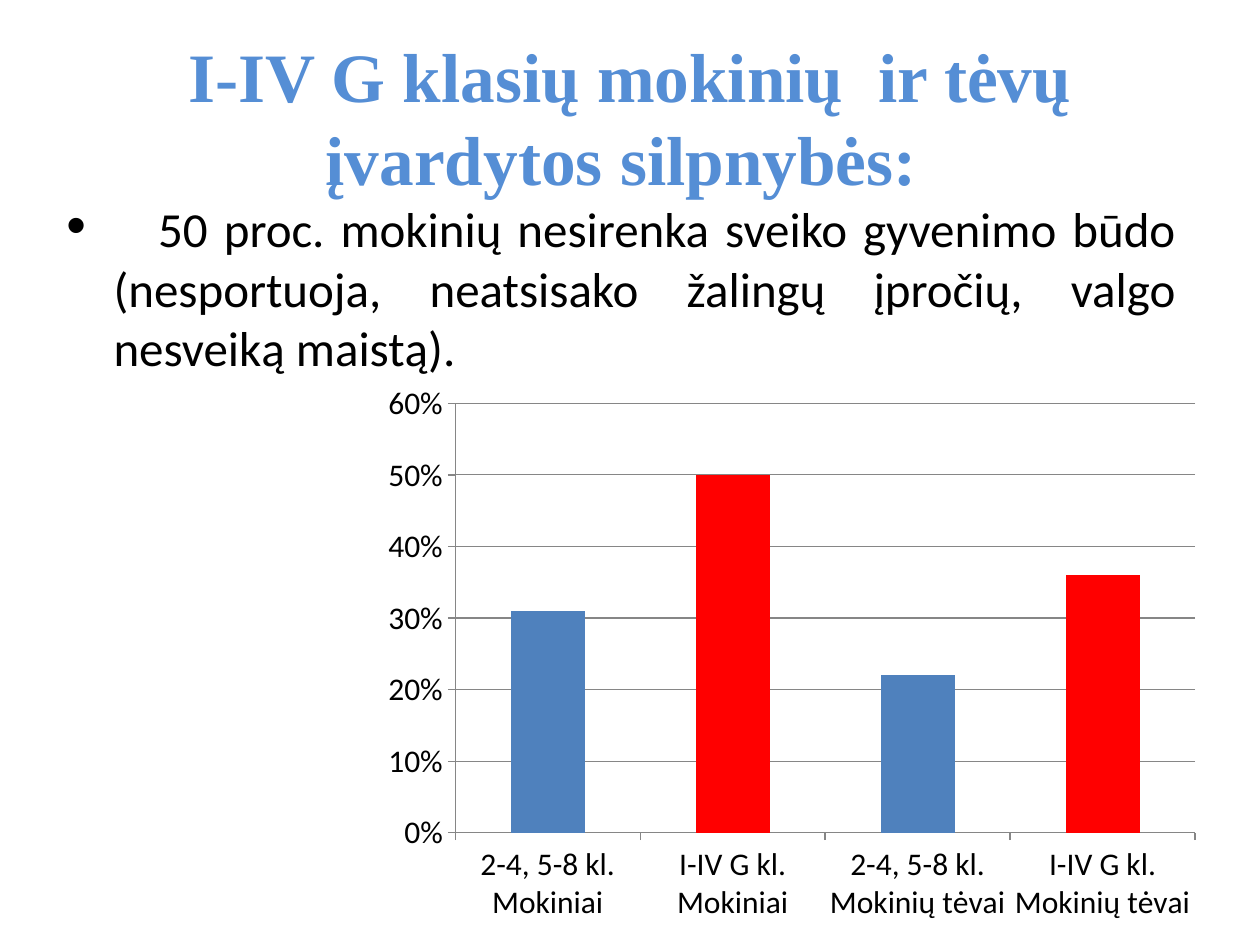
from lxml import etree
from pptx import Presentation
from pptx.chart.data import CategoryChartData
from pptx.dml.color import RGBColor
from pptx.enum.chart import XL_CHART_TYPE, XL_TICK_MARK
from pptx.enum.text import MSO_ANCHOR, PP_ALIGN
from pptx.oxml.ns import qn
from pptx.util import Cm, Pt

COLUMN = XL_CHART_TYPE.COLUMN_CLUSTERED
OUT = XL_TICK_MARK.OUTSIDE
TOP, MIDDLE = MSO_ANCHOR.TOP, MSO_ANCHOR.MIDDLE
CENTER, JUSTIFY = PP_ALIGN.CENTER, PP_ALIGN.JUSTIFY

SKY = RGBColor(0x55, 0x8E, 0xD5)
BLUE = RGBColor(0x4F, 0x81, 0xBD)
RED = RGBColor(0xFF, 0x00, 0x00)
BLACK = RGBColor(0x00, 0x00, 0x00)
GRAY = RGBColor(0x86, 0x86, 0x86)

SHARES = {
    "2-4, 5-8 kl. Mokiniai": 0.31,
    "I-IV G kl. Mokiniai": 0.5,
    "2-4, 5-8 kl. Mokinių tėvai": 0.22,
    "I-IV G kl. Mokinių tėvai": 0.36,
}


def write(para, text, font="Calibri", size=28, color=BLACK, bold=False):
    run = para.add_run()
    run.text = text
    run.font.name = font
    run.font.size = Pt(size)
    run.font.color.rgb = color
    run.font.bold = bold


class Page:
    def __init__(self, slide):
        self.slide = slide
        self.font = "Calibri"
        self.ink = BLACK
        self.line = GRAY

    def frame(self, box, anchor, align):
        frame = self.slide.shapes.add_textbox(*box).text_frame
        frame.word_wrap = True
        frame.vertical_anchor = anchor
        para = frame.paragraphs[0]
        para.alignment = align
        return para

    def title(self, text, box):
        para = self.frame(box, MIDDLE, CENTER)
        write(para, text, font="Times New Roman", size=39.6, color=SKY, bold=True)

    def bullet(self, text, box, indent, start):
        para = self.frame(box, TOP, JUSTIFY)
        para.space_before = Pt(6)
        props = para._p.get_or_add_pPr()
        props.set("marL", str(indent))
        props.set("indent", str(-indent))
        etree.SubElement(props, qn("a:buFont"), typeface="Arial")
        etree.SubElement(props, qn("a:buChar"), char="•")
        tabs = etree.SubElement(props, qn("a:tabLst"))
        etree.SubElement(tabs, qn("a:tab"), pos=str(start), algn="l")
        write(para, "\t", font=self.font, size=32, color=self.ink)
        write(para, text, font=self.font, color=self.ink)

    def columns(self, shares, box, fills):
        data = CategoryChartData(number_format="0%")
        data.categories = list(shares)
        data.add_series("Series 1", list(shares.values()))
        chart = self.slide.shapes.add_chart(COLUMN, *box, data).chart
        chart.has_title = False
        chart.has_legend = False
        chart.font.name = self.font
        chart.font.size = Pt(18)
        chart.font.color.rgb = self.ink
        plot = chart.plots[0]
        plot.gap_width = 150
        plot.vary_by_categories = False
        bars = plot.series[0]
        bars.format.fill.solid()
        bars.format.fill.fore_color.rgb = fills[0]
        for spot in range(1, len(shares), 2):
            fill = bars.points[spot].format.fill
            fill.solid()
            fill.fore_color.rgb = fills[1]
        scale = chart.value_axis
        scale.minimum_scale, scale.maximum_scale = 0, 0.6
        scale.major_unit = 0.1
        scale.has_major_gridlines = True
        scale.tick_labels.number_format = "0%"
        scale.tick_labels.number_format_is_linked = False
        for axis in (scale, chart.category_axis):
            axis.major_tick_mark = OUT
            axis.format.line.color.rgb = self.line
        scale.major_gridlines.format.line.color.rgb = self.line


def main():
    deck = Presentation()
    deck.slide_width, deck.slide_height = Cm(25.4), Cm(19.05)
    page = Page(deck.slides.add_slide(deck.slide_layouts[6]))
    page.title(
        "I-IV G klasių mokinių  ir tėvų įvardytos silpnybės: ",
        (Cm(1.27), Cm(0.76), Cm(22.86), Cm(3.18)),
    )
    page.bullet(
        "50 proc. mokinių nesirenka sveiko gyvenimo būdo "
        "(nesportuoja, neatsisako žalingų įpročių, valgo nesveiką maistą).",
        (Cm(1.09), Cm(3.73), Cm(22.86), Cm(12.57)),
        indent=Cm(0.95),
        start=Cm(1.85),
    )
    page.columns(SHARES, (Cm(7.49), Cm(7.52), Cm(16.94), Cm(11.28)), (BLUE, RED))
    deck.save("out.pptx")


if __name__ == "__main__":
    main()
